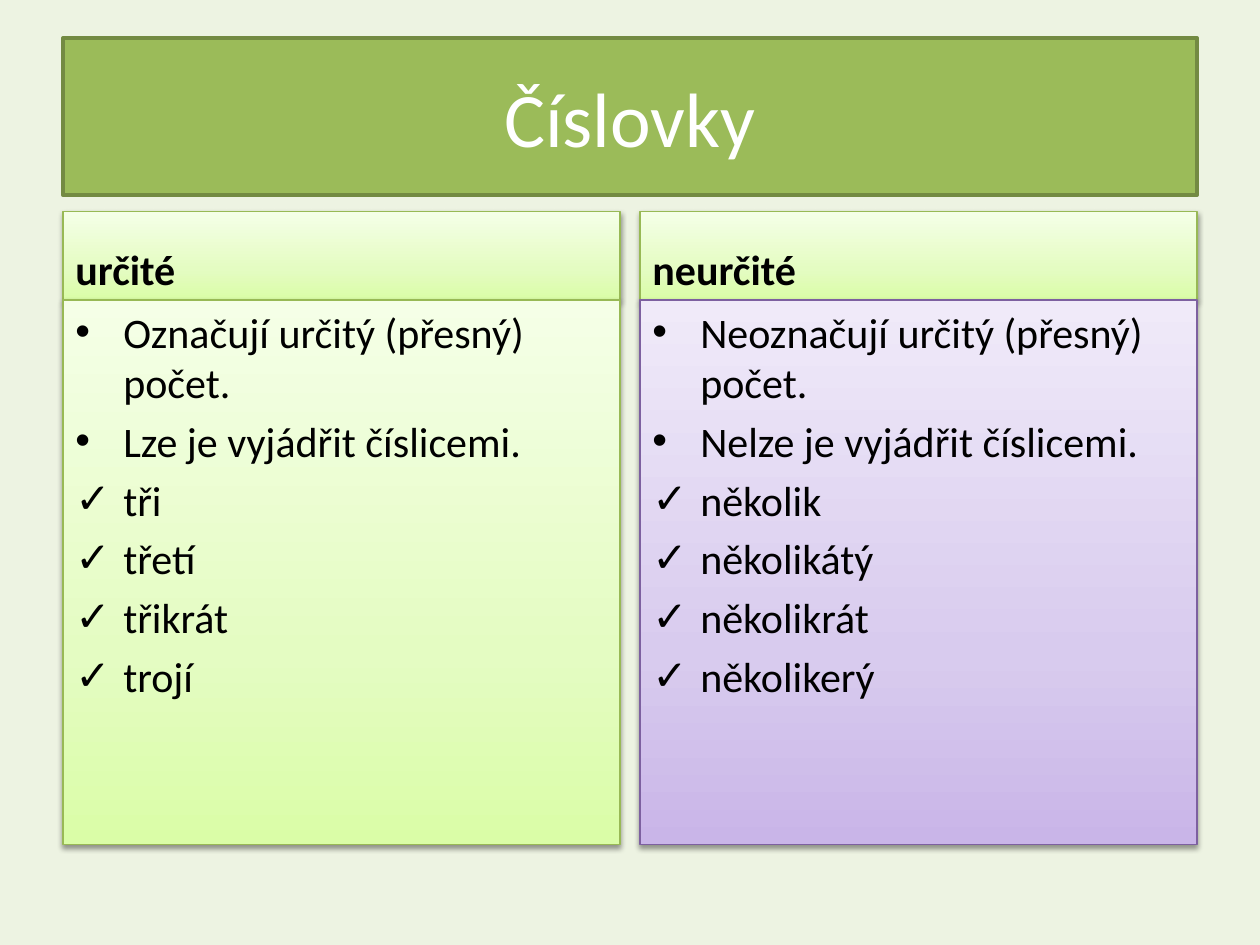
from lxml import etree
from pptx import Presentation
from pptx.dml.color import RGBColor
from pptx.enum.shapes import MSO_SHAPE as Kind
from pptx.enum.text import MSO_ANCHOR as Anchor, PP_ALIGN as Align
from pptx.oxml import parse_xml
from pptx.oxml.ns import nsdecls, qn
from pptx.util import Inches, Pt

PAGE = RGBColor(0xED, 0xF3, 0xE2)
GREEN = RGBColor(0x9B, 0xBB, 0x59)
DARK = RGBColor(0x73, 0x8A, 0x42)
EDGE = RGBColor(0x98, 0xB9, 0x55)
VIOLET = RGBColor(0x7D, 0x60, 0xA0)
WHITE = RGBColor(0xFF, 0xFF, 0xFF)
BLACK = RGBColor(0, 0, 0)
# Gradient colours, from bottom to top
LIME = [RGBColor(0xDA, 0xFD, 0xA7), RGBColor(0xE4, 0xFC, 0xC2), RGBColor(0xF5, 0xFF, 0xE7)]
LILAC = [RGBColor(0xC9, 0xB5, 0xE8), RGBColor(0xD8, 0xCB, 0xEE), RGBColor(0xF0, 0xEA, 0xF9)]

prs = Presentation()
prs.slide_width, prs.slide_height = Inches(10), Inches(7.5)
slide = prs.slides.add_slide(prs.slide_layouts[6])
slide.background.fill.solid()
slide.background.fill.fore_color.rgb = PAGE


def add_box(left, top, width, height, lines, size, color, edge, weight, anchor):
    box = slide.shapes.add_shape(
        Kind.RECTANGLE, Inches(left), Inches(top), Inches(width), Inches(height))
    box.shadow.inherit = False
    box.line.color.rgb = edge
    box.line.width = Pt(weight)
    frame = box.text_frame
    frame.word_wrap = True
    frame.vertical_anchor = anchor
    frame.text = "\n".join(lines)
    for para in frame.paragraphs:
        para.alignment = Align.LEFT
        font = para.runs[0].font
        font.name, font.size, font.color.rgb = "Calibri", Pt(size), color
    return box


def add_panel(left, top, height, lines, shades, edge, anchor):
    box = add_box(left, top, 4.42, height, lines, 24, BLACK, edge, 0.75, anchor)
    for para in box.text_frame.paragraphs:
        para.space_before = Pt(4.8)
    # Three-stop gradient and soft shadow
    stops = "".join(f'<a:gs pos="{pos}"><a:srgbClr val="{shade}"/></a:gs>'
                    for pos, shade in zip((0, 35000, 100000), shades))
    props = box.fill._xPr
    props.find(qn("a:prstGeom")).addnext(parse_xml(
        f'<a:gradFill {nsdecls("a")} rotWithShape="1"><a:gsLst>{stops}</a:gsLst>'
        '<a:lin ang="16200000" scaled="0"/></a:gradFill>'))
    props.find(qn("a:effectLst")).append(parse_xml(
        f'<a:outerShdw {nsdecls("a")} blurRad="40000" dist="20000" dir="5400000" '
        'rotWithShape="0"><a:srgbClr val="000000"><a:alpha val="38000"/>'
        '</a:srgbClr></a:outerShdw>'))
    return box


# Title
title = add_box(0.5, 0.3, 9, 1.25, ["Číslovky"], 44, WHITE, DARK, 2, Anchor.MIDDLE)
title.fill.solid()
title.fill.fore_color.rgb = GREEN
title.text_frame.paragraphs[0].alignment = Align.CENTER

# Two columns: heading, two rules, then examples
columns = [
    (0.5, "určité", LIME, EDGE,
     ["Označují určitý (přesný) počet.", "Lze je vyjádřit číslicemi."],
     ["tři", "třetí", "třikrát", "trojí"]),
    (5.08, "neurčité", LILAC, VIOLET,
     ["Neoznačují určitý (přesný) počet.", "Nelze je vyjádřit číslicemi."],
     ["několik", "několikátý", "několikrát", "několikerý"]),
]
for left, name, shades, edge, rules, words in columns:
    head = add_panel(left, 1.68, 0.7, [name], LIME, EDGE, Anchor.BOTTOM)
    head.text_frame.paragraphs[0].runs[0].font.bold = True

    body = add_panel(left, 2.38, 4.32, rules + words, shades, edge, Anchor.TOP)
    marks = "•" * len(rules) + "✓" * len(words)
    for para, mark in zip(body.text_frame.paragraphs, marks):
        props = para._p.get_or_add_pPr()
        props.set("marL", str(Inches(0.38)))
        props.set("indent", str(-Inches(0.38)))
        etree.SubElement(props, qn("a:buFont")).set("typeface", "Arial")
        etree.SubElement(props, qn("a:buChar")).set("char", mark)

prs.save("out.pptx")
